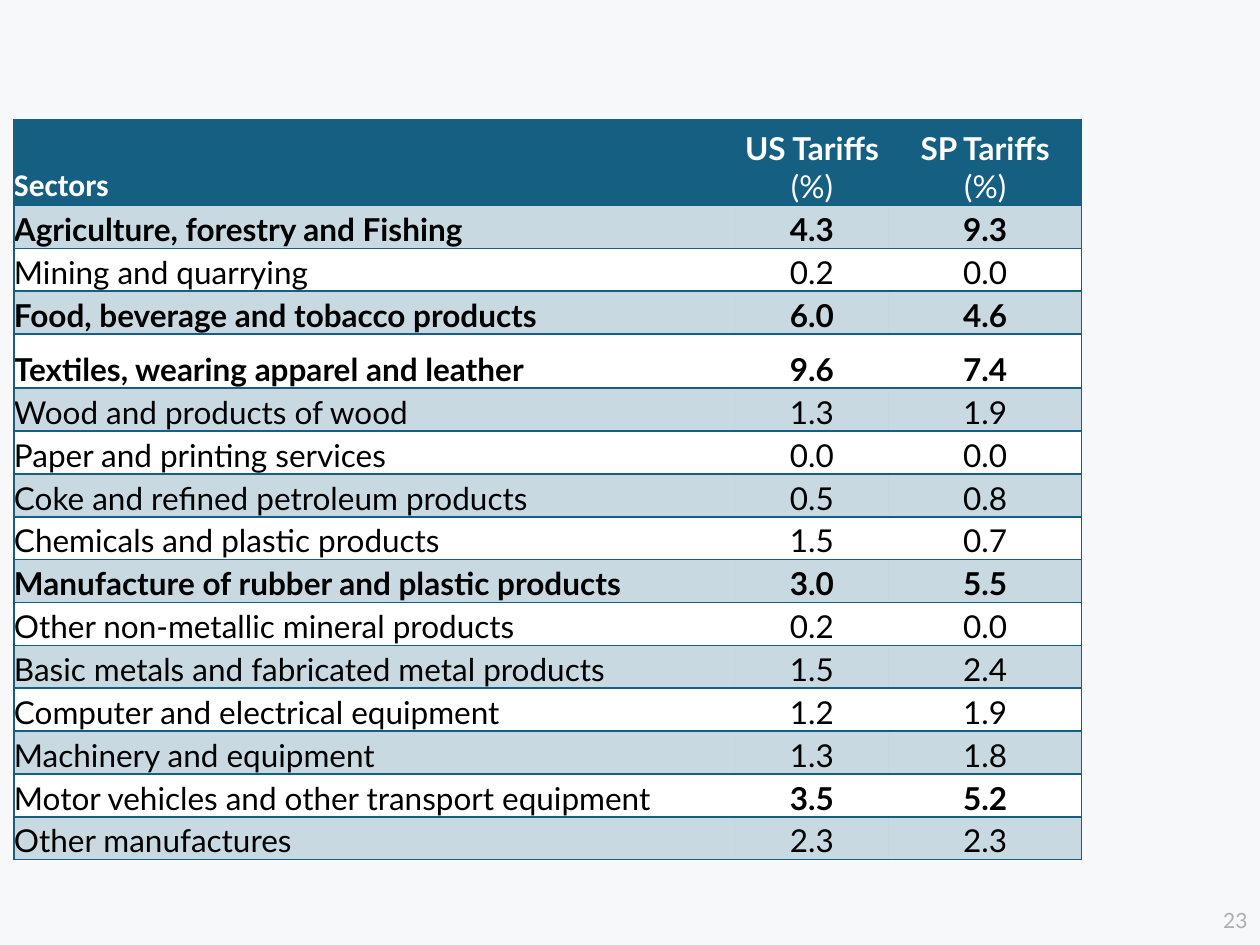
from lxml.etree import SubElement
from pptx import Presentation
from pptx.dml.color import RGBColor
from pptx.enum.text import MSO_ANCHOR as Anchor, PP_ALIGN as Align
from pptx.oxml import parse_xml
from pptx.oxml.ns import nsdecls, qn
from pptx.util import Pt

TEAL = RGBColor(0x15, 0x60, 0x82)
WHITE = RGBColor(0xFF, 0xFF, 0xFF)
BLACK = RGBColor(0, 0, 0)
GREY = RGBColor(0xAE, 0xAE, 0xAE)
BACKGROUND = RGBColor(0xF7, 0xF8, 0xFA)

PLAIN_TABLE_STYLE = "{2D5ABB26-0587-4C30-8999-92F81FD0307C}"
COLUMN_WIDTHS = (412, 88, 110)
HEADER_HEIGHT, ROW_HEIGHT, TALL_ROW_HEIGHT = 49, 24.5, 31

HEADERS = ("Sectors", "US Tariffs\n(%)", "SP Tariffs\n(%)")
# sector, US tariff, SP tariff, sector in bold, tariffs in bold
SECTORS = (
    ("Agriculture, forestry and Fishing", 4.3, 9.3, True, True),
    ("Mining and quarrying", 0.2, 0.0, False, False),
    ("Food, beverage and tobacco products", 6.0, 4.6, True, True),
    ("Textiles, wearing apparel and leather", 9.6, 7.4, True, True),
    ("Wood and products of wood", 1.3, 1.9, False, False),
    ("Paper and printing services", 0.0, 0.0, False, False),
    ("Coke and refined petroleum products", 0.5, 0.8, False, False),
    ("Chemicals and plastic products", 1.5, 0.7, False, False),
    ("Manufacture of rubber and plastic products", 3.0, 5.5, True, True),
    ("Other non-metallic mineral products", 0.2, 0.0, False, False),
    ("Basic metals and fabricated metal products", 1.5, 2.4, False, False),
    ("Computer and electrical equipment", 1.2, 1.9, False, False),
    ("Machinery and equipment", 1.3, 1.8, False, False),
    ("Motor vehicles and other transport equipment", 3.5, 5.2, False, True),
    ("Other manufactures", 2.3, 2.3, False, False),
)
TALL_ROW = 4


class TariffSlide:
    font = "Lato"
    header_font = "Calibri"
    size = 18

    def __init__(self, deck):
        self.page = deck.slides.add_slide(deck.slide_layouts[6])
        fill = self.page.background.fill
        fill.solid()
        fill.fore_color.rgb = BACKGROUND

    def format(self, para, color, size, bold=False, align=Align.LEFT, font=None):
        para.alignment = align
        for span in para.runs:
            span.font.name = font or self.font
            span.font.size = Pt(size)
            span.font.bold = bold
            span.font.color.rgb = color

    def page_number(self, text, left, top, width, height):
        box = self.page.shapes.add_textbox(Pt(left), Pt(top), Pt(width), Pt(height))
        frame = box.text_frame
        frame.word_wrap = True
        frame.vertical_anchor = Anchor.MIDDLE
        frame.text = text
        self.format(frame.paragraphs[0], GREY, 12, align=Align.RIGHT)

    def table(self, left, top, widths, heights):
        frame = self.page.shapes.add_table(
            len(heights), len(widths), Pt(left), Pt(top), Pt(sum(widths)), Pt(sum(heights)))
        table = frame.table
        table.first_row = table.horz_banding = False
        table._tbl.tblPr.find(qn("a:tableStyleId")).text = PLAIN_TABLE_STYLE
        for column, width in zip(table.columns, widths):
            column.width = Pt(width)
        for row, height in zip(table.rows, heights):
            row.height = Pt(height)
        return table

    def cell(self, cell, text, fill, sides, alpha=None):
        cell.margin_left = cell.margin_right = cell.margin_top = cell.margin_bottom = 0
        cell.vertical_anchor = Anchor.BOTTOM
        cell.text_frame.text = text
        cell.fill.solid()
        cell.fill.fore_color.rgb = fill
        properties = cell._tc.get_or_add_tcPr()
        if alpha:
            color = properties.find(qn("a:solidFill")).find(qn("a:srgbClr"))
            SubElement(color, qn("a:alpha"), val=str(alpha * 1000))
        for index, side in enumerate(sides):
            properties.insert(index, parse_xml(
                f'<a:ln{side} {nsdecls("a")} w="{Pt(1)}"><a:solidFill>'
                f'<a:srgbClr val="{TEAL}"/></a:solidFill></a:ln{side}>'))
        return cell.text_frame.paragraphs

    def tariff_table(self, left, top):
        heights = [HEADER_HEIGHT] + [ROW_HEIGHT] * len(SECTORS)
        heights[TALL_ROW] = TALL_ROW_HEIGHT
        table = self.table(left, top, COLUMN_WIDTHS, heights)
        borders = ("LTB", "TB", "RTB")
        aligns = (Align.LEFT, Align.CENTER, Align.CENTER)

        for column, text in enumerate(HEADERS):
            paras = self.cell(table.cell(0, column), text, TEAL, borders[column])
            font = self.font if column else self.header_font
            for line, para in enumerate(paras):
                self.format(para, WHITE, self.size, line == 0, aligns[column], font)

        for row, (sector, us, sp, bold_sector, bold_tariffs) in enumerate(SECTORS, 1):
            fill, alpha = (TEAL, 20) if row % 2 else (WHITE, None)
            for column, text in enumerate((sector, f"{us:.1f}", f"{sp:.1f}")):
                paras = self.cell(table.cell(row, column), text, fill, borders[column], alpha)
                bold = bold_tariffs if column else bold_sector
                self.format(paras[0], BLACK, self.size, bold, aligns[column])


def main():
    deck = Presentation()
    deck.slide_width, deck.slide_height = Pt(720), Pt(540)
    slide = TariffSlide(deck)
    slide.page_number("23", 679.7, 512.6, 40.3, 26)
    slide.tariff_table(8, 68.4)
    deck.save("out.pptx")


if __name__ == "__main__":
    main()
